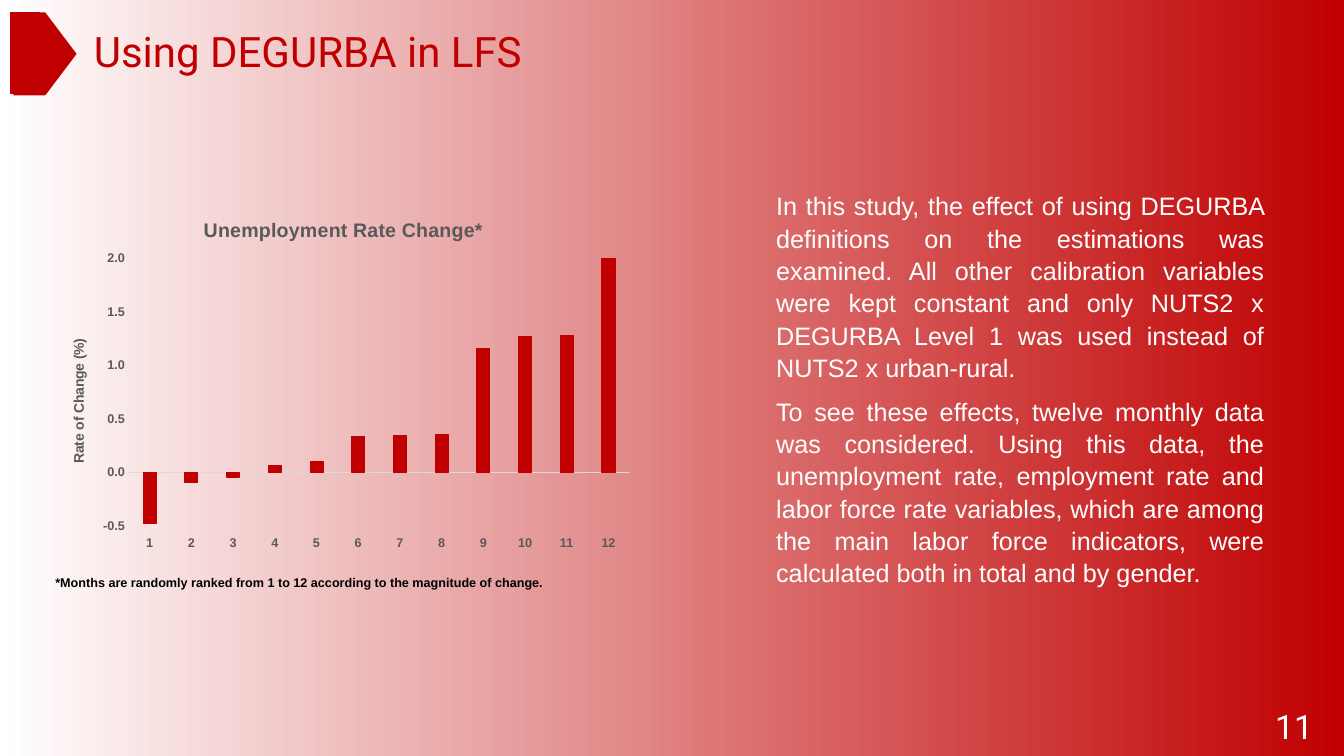
from dataclasses import dataclass

from lxml.etree import SubElement
from pptx import Presentation
from pptx.chart.data import CategoryChartData
from pptx.dml.color import RGBColor
from pptx.enum.chart import XL_CHART_TYPE as ChartType
from pptx.enum.chart import XL_TICK_LABEL_POSITION as LabelPosition
from pptx.enum.chart import XL_TICK_MARK as TickMark
from pptx.enum.shapes import MSO_SHAPE as Preset
from pptx.enum.text import MSO_ANCHOR as Anchor
from pptx.enum.text import MSO_AUTO_SIZE as AutoSize
from pptx.enum.text import PP_ALIGN as Align
from pptx.oxml.ns import qn
from pptx.util import Inches, Pt


@dataclass(frozen=True)
class Theme:
    red: str = "C00000"
    white: str = "FFFFFF"
    black: str = "000000"
    gray: str = "595959"
    light_gray: str = "D9D9D9"
    heading_font: str = "Roboto"
    body_font: str = "Arial"
    title_size: int = 30
    number_size: int = 24
    body_size: int = 18
    chart_title_size: int = 14
    axis_title_size: int = 10
    small_size: int = 9


def style_font(font, name, size, color, bold=False):
    font.name, font.size, font.bold = name, Pt(size), bold
    font.color.rgb = RGBColor.from_string(color)


def write_text(frame, *texts, align=Align.LEFT, spacing=None, gap=0, **font_format):
    """Fill a text frame with one unbulleted paragraph per text, gap points apart."""
    for index, text in enumerate(texts):
        paragraph = frame.add_paragraph() if index else frame.paragraphs[0]
        properties = paragraph._p.get_or_add_pPr()
        properties.set("marL", "0")
        properties.set("indent", "0")
        SubElement(properties, qn("a:buNone"))
        paragraph.alignment = align
        paragraph.line_spacing = spacing
        paragraph.space_before = Pt(gap if index else 0)
        run = paragraph.add_run()
        run.text = text
        style_font(run.font, **font_format)


class SlideBuilder:
    """Adds styled elements at (left, top, width, height) in percent of the slide."""

    def __init__(self, presentation, theme):
        self.theme = theme
        self.page = (presentation.slide_width, presentation.slide_height)
        self.slide = presentation.slides.add_slide(presentation.slide_layouts[1])

    def place(self, area):
        return [round(share / 100 * side) for share, side in zip(area, self.page * 2)]

    def background(self, start, end):
        fill = self.slide.background.fill
        fill.gradient()
        fill.gradient_angle = 0
        for stop, color in zip(fill.gradient_stops, (start, end)):
            stop.color.rgb = RGBColor.from_string(color)

    def marker(self, preset, area, line_width):
        shape = self.slide.shapes.add_shape(preset, *self.place(area))
        shape.shadow.inherit = False
        shape.fill.solid()
        shape.fill.fore_color.rgb = RGBColor.from_string(self.theme.red)
        shape.line.color.rgb = RGBColor.from_string(self.theme.red)
        shape.line.width = Pt(line_width)

    def placeholder(self, index, area, *texts, anchor=Anchor.TOP, **text_format):
        shape = self.slide.placeholders[index]
        shape.left, shape.top, shape.width, shape.height = self.place(area)
        self.fill_frame(shape.text_frame, texts, anchor, text_format)

    def text_box(self, area, *texts, anchor=Anchor.TOP, **text_format):
        shape = self.slide.shapes.add_textbox(*self.place(area))
        self.fill_frame(shape.text_frame, texts, anchor, text_format)

    def fill_frame(self, frame, texts, anchor, text_format):
        frame.word_wrap = True
        frame.auto_size = AutoSize.NONE
        frame.vertical_anchor = anchor
        write_text(frame, *texts, **text_format)

    def column_chart(self, area, title, axis_title, values, plot_area):
        theme = self.theme
        label = dict(name=theme.body_font, color=theme.gray, bold=True)
        data = CategoryChartData(number_format="0.00")
        data.categories = [str(month) for month in range(1, len(values) + 1)]
        data.add_series(title, values)
        chart = self.slide.shapes.add_chart(
            ChartType.COLUMN_CLUSTERED, *self.place(area), data).chart
        style_font(chart.font, theme.body_font, theme.axis_title_size, theme.black)
        chart.has_legend = False
        write_text(chart.chart_title.text_frame, title, align=Align.CENTER,
                   size=theme.chart_title_size, **label)

        months, rates = chart.category_axis, chart.value_axis
        for axis in (months, rates):
            axis.has_major_gridlines = False
            axis.major_tick_mark = axis.minor_tick_mark = TickMark.NONE
            style_font(axis.tick_labels.font, size=theme.small_size, **label)
        months.tick_label_position = LabelPosition.LOW
        months.format.line.color.rgb = RGBColor.from_string(theme.light_gray)
        months.format.line.width = Pt(0.75)
        rates.minimum_scale, rates.maximum_scale, rates.major_unit = -0.5, 2, 0.5
        rates.tick_labels.number_format = "0.0"
        rates.tick_labels.number_format_is_linked = False
        rates.format.line.fill.background()
        write_text(rates.axis_title.text_frame, axis_title, align=Align.CENTER,
                   size=theme.axis_title_size, **label)

        plot = chart.plots[0]
        plot.vary_by_categories = False
        plot.gap_width, plot.overlap = 219, -27
        series = plot.series[0]
        series.invert_if_negative = False
        series.format.fill.solid()
        series.format.fill.fore_color.rgb = RGBColor.from_string(theme.red)
        series.format.line.color.rgb = RGBColor.from_string(theme.red)
        series.format.line.width = Pt(0.75)
        self.fix_plot_area(chart, plot_area)

    def fix_plot_area(self, chart, shares):
        """Pin the inner plot area to left, top, width, height shares of the chart."""
        plot_area = chart._chartSpace.find(".//" + qn("c:plotArea"))
        layout = plot_area.find(qn("c:layout"))
        if layout is None:
            layout = SubElement(plot_area, qn("c:layout"))
            plot_area.insert(0, layout)
        manual = SubElement(layout, qn("c:manualLayout"))
        settings = [("layoutTarget", "inner"), ("xMode", "edge"), ("yMode", "edge"),
                    *zip("xywh", shares)]
        for tag, value in settings:
            SubElement(manual, qn("c:" + tag)).set("val", str(value))


def main():
    presentation = Presentation()
    presentation.slide_width, presentation.slide_height = Inches(13.33), Inches(7.5)
    theme = Theme()
    builder = SlideBuilder(presentation, theme)

    builder.background(theme.white, theme.red)
    builder.marker(Preset.PENTAGON, (1.05, 1.73, 4.58, 10.8), line_width=1)
    builder.marker(Preset.RECTANGLE, (0.75, 1.6, 2.18, 10.8), line_width=0.75)
    builder.placeholder(
        0, (6.23, 3.2, 63.54, 7.87), "Using DEGURBA in LFS", anchor=Anchor.MIDDLE,
        spacing=0.9, name=theme.heading_font, size=theme.title_size, color=theme.red)
    builder.placeholder(
        1, (57, 24.27, 37.81, 54.4),
        "In this study, the effect of using DEGURBA definitions on the estimations was "
        "examined. All other calibration variables were kept constant and only NUTS2 x "
        "DEGURBA Level 1 was used instead of NUTS2 x urban-rural.",
        "To see these effects, twelve monthly data was considered. Using this data, the "
        "unemployment rate, employment rate and labor force rate variables, which are "
        "among the main labor force indicators, were calculated both in total and by "
        "gender.",
        align=Align.JUSTIFY, spacing=1.07, gap=8,
        name=theme.body_font, size=theme.body_size, color=theme.white)
    builder.column_chart(
        (3.38, 26.67, 44.34, 47.2), "Unemployment Rate Change*", "Rate of Change (%)",
        (-0.47, -0.09, -0.04, 0.07, 0.1, 0.34, 0.35, 0.36, 1.16, 1.27, 1.28, 2.1),
        plot_area=(0.14, 0.16, 0.84, 0.75))
    builder.text_box(
        (3.38, 75.33, 40, 3.33),
        "*Months are randomly ranked from 1 to 12 according to the magnitude of change.",
        name=theme.body_font, size=theme.small_size, color=theme.black, bold=True)
    builder.text_box(
        (93.4, 93.33, 5.03, 5.33), "11", anchor=Anchor.MIDDLE, align=Align.RIGHT,
        name=theme.heading_font, size=theme.number_size, color=theme.white)

    presentation.save("out.pptx")


if __name__ == "__main__":
    main()
